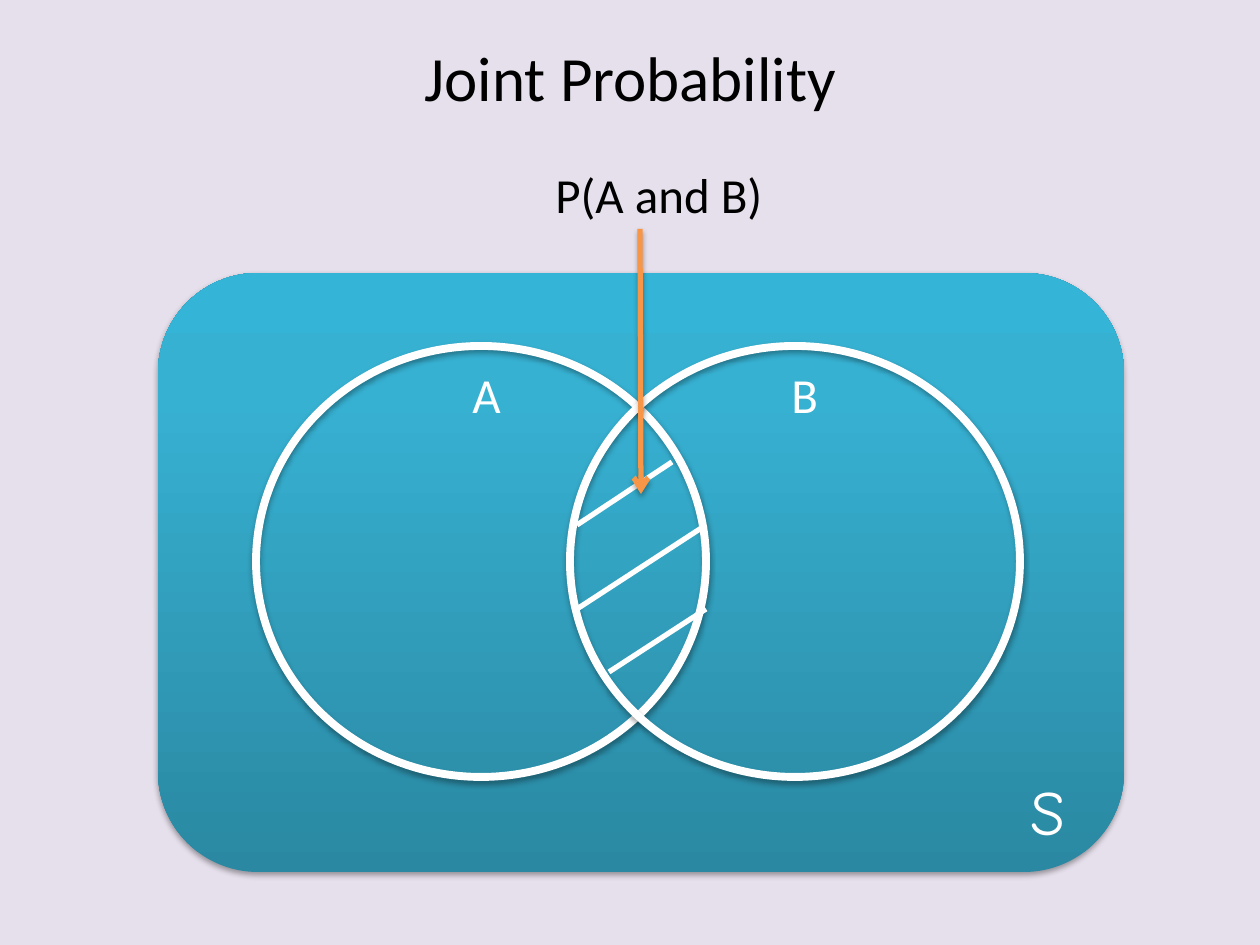
import pptx
import pptx.dml.color
import pptx.enum.shapes
import pptx.enum.text
import pptx.oxml
import pptx.oxml.ns
import pptx.util
from lxml import etree

EMU_PER_PX = 914400 / 126
WHITE, BLACK, ORANGE = "FFFFFF", "000000", "F79646"
SPACE_STOPS = [(0, "2A88A2"), (80, "37B1D2"), (100, "34B4D6")]
NS = 'xmlns:a="http://schemas.openxmlformats.org/drawingml/2006/main"'
SHAPES = pptx.enum.shapes.MSO_SHAPE
ALIGN = pptx.enum.text.PP_ALIGN
ANCHOR = pptx.enum.text.MSO_ANCHOR


def px(*lengths):
    return [pptx.util.Emu(round(length * EMU_PER_PX)) for length in lengths]


def color(value):
    return pptx.dml.color.RGBColor.from_string(value)


def set_effects(spPr, shadow):
    """Replace the theme's shadow by a soft one below, or by none."""
    for old in spPr.findall(pptx.oxml.ns.qn("a:effectLst")):
        spPr.remove(old)
    effects = etree.SubElement(spPr, pptx.oxml.ns.qn("a:effectLst"))
    if shadow:
        effects.append(pptx.oxml.parse_xml(
            f'<a:outerShdw {NS} blurRad="40000" dist="23000" dir="5400000" rotWithShape="0">'
            '<a:srgbClr val="000000"><a:alpha val="35000"/></a:srgbClr></a:outerShdw>'))


def add_text(slide, text, box, *, size, ink=BLACK, font="Calibri",
             align=ALIGN.LEFT, anchor=ANCHOR.TOP, wrap=True):
    frame = slide.shapes.add_textbox(*px(*box)).text_frame
    frame.word_wrap = wrap
    frame.auto_size = pptx.enum.text.MSO_AUTO_SIZE.SHAPE_TO_FIT_TEXT
    frame.vertical_anchor = anchor
    paragraph = frame.paragraphs[0]
    paragraph.alignment = align
    run = paragraph.add_run()
    run.text = text
    run.font.size = pptx.util.Pt(size)
    run.font.name = font
    run.font.color.rgb = color(ink)


def add_sample_space(slide, box):
    space = slide.shapes.add_shape(SHAPES.ROUNDED_RECTANGLE, *px(*box))
    space.fill.gradient()
    space.fill.gradient_angle = 90
    stops = space._element.spPr.find(".//" + pptx.oxml.ns.qn("a:gsLst"))
    for stop in list(stops):
        stops.remove(stop)
    for position, value in SPACE_STOPS:
        stops.append(pptx.oxml.parse_xml(
            f'<a:gs {NS} pos="{position * 1000}"><a:srgbClr val="{value}"/></a:gs>'))
    space.line.fill.background()
    set_effects(space._element.spPr, shadow=True)


def add_event(slide, box):
    event = slide.shapes.add_shape(SHAPES.OVAL, *px(*box))
    event.fill.background()
    event.line.color.rgb = color(WHITE)
    event.line.width = pptx.util.Pt(4.5)
    set_effects(event._element.spPr, shadow=True)


def add_line(slide, start, end, ink, arrow=False):
    line = slide.shapes.add_connector(
        pptx.enum.shapes.MSO_CONNECTOR.STRAIGHT, *px(*start, *end))
    line.line.color.rgb = color(ink)
    line.line.width = pptx.util.Pt(3)
    if arrow:
        line.line._get_or_add_ln().append(
            pptx.oxml.parse_xml(f'<a:tailEnd {NS} type="arrow"/>'))
    set_effects(line._element.spPr, shadow=arrow)


def main():
    deck = pptx.Presentation()
    deck.slide_width, deck.slide_height = px(1260, 945)
    slide = deck.slides.add_slide(deck.slide_layouts[6])
    slide.background.fill.solid()
    slide.background.fill.fore_color.rgb = color("E6E0EC")

    # Title
    add_text(slide, "Joint Probability", (410, 32, 441, 89), size=36,
             align=ALIGN.CENTER, anchor=ANCHOR.MIDDLE, wrap=False)

    # Sample space with two overlapping events
    add_sample_space(slide, (158, 273, 966, 599))
    for left in (256, 570):
        add_event(slide, (left, 346, 450, 431))

    # Hatching of the intersection
    for start, end in [((672, 462), (577, 525)),
                       ((706, 525), (577, 609)),
                       ((706, 609), (609, 672))]:
        add_line(slide, start, end, WHITE)

    # Labels
    add_text(slide, "P(A and B)", (543, 158, 236, 72), size=28, wrap=False)
    add_text(slide, "S", (1018, 766, 84, 89), size=36, ink=WHITE, font="Comic Neue")
    for name, left in (("A", 460), ("B", 779)):
        add_text(slide, name, (left, 358, 42, 72), size=28, ink=WHITE)

    # Pointer to the intersection
    add_line(slide, (640, 229), (641, 494), ORANGE, arrow=True)

    deck.save("out.pptx")


if __name__ == "__main__":
    main()
